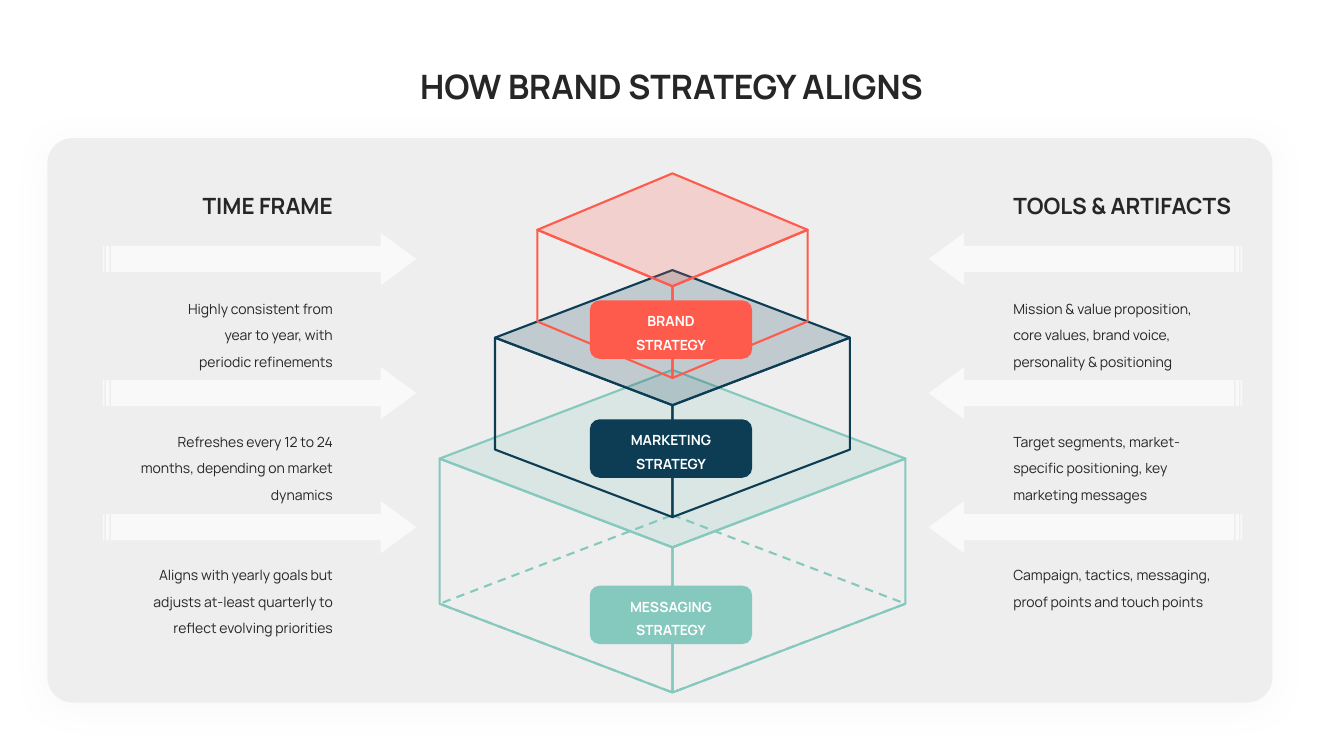
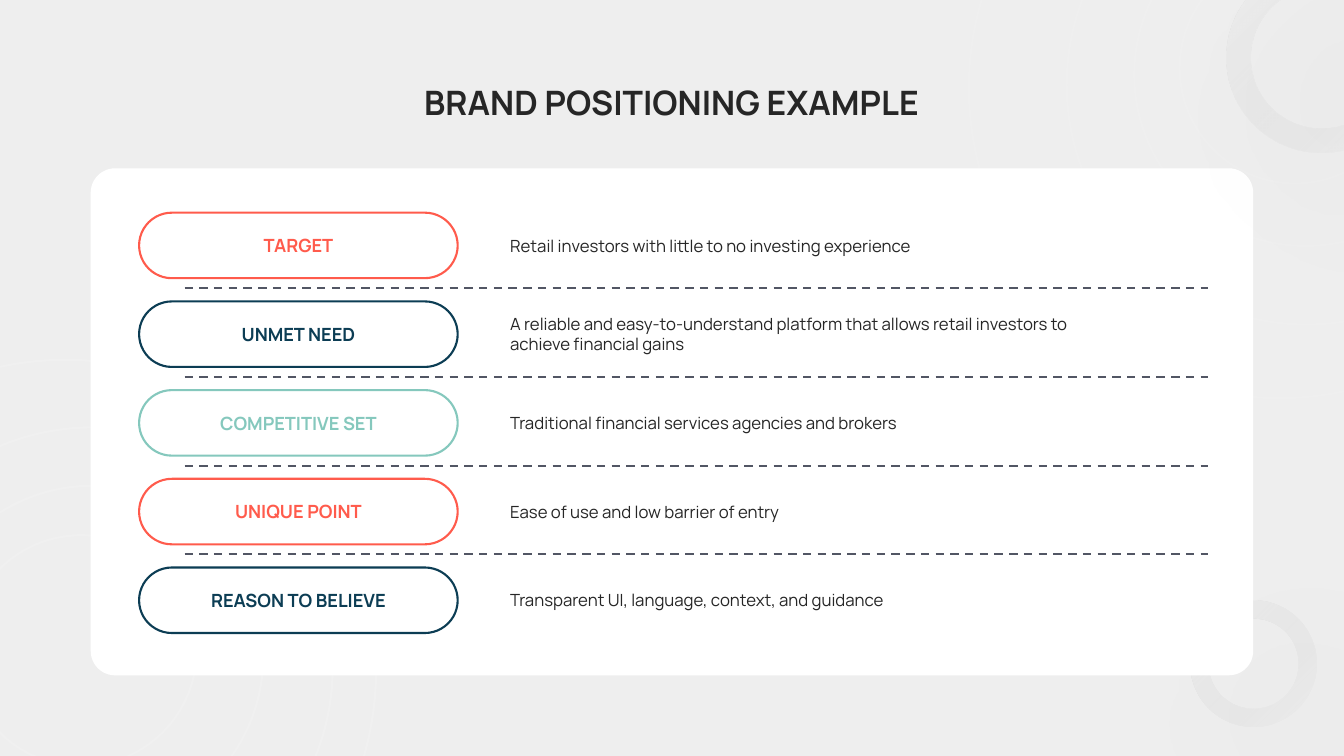
from lxml.etree import SubElement
from pptx import Presentation
from pptx.dml.color import RGBColor
from pptx.enum.dml import MSO_LINE
from pptx.enum.shapes import MSO_CONNECTOR, MSO_SHAPE
from pptx.enum.text import MSO_ANCHOR, PP_ALIGN
from pptx.oxml.ns import qn
from pptx.util import Inches, Pt

COLORS = {
    "ink": "262626", "white": "FFFFFF", "mist": "EEEEEE", "gray": "7F7F7F",
    "coral": "FF5B4C", "navy": "0C3D54", "mint": "85C8BD", "slate": "525664",
    "silver": "BFBFBF", "black": "000000", "blue": "3553D3",
}
FONT = "Manrope"
FRAME = {"margin_left": 0, "margin_right": 0, "margin_top": 0,
         "margin_bottom": 0, "word_wrap": True}
TITLE = {"size": 24, "bold": True, "align": PP_ALIGN.CENTER}
HEADING = {"size": 16, "bold": True}
BODY = {"size": 10, "spacing": 1.56, "anchor": MSO_ANCHOR.TOP}
BADGE = {"size": 10, "bold": True, "color": "white", "spacing": 1.4,
         "align": PP_ALIGN.CENTER}
PILL = {"size": 13, "bold": True, "align": PP_ALIGN.CENTER}
# colour, opacity %, blur pt, distance pt, direction degrees
PANEL_SHADOW = ("silver", 10, 24, 4, 90)
RING_SHADOW = ("blue", 5, 52, 4, 90)
DONUT_SHADOW = ("black", 40, 100, 65, 45)


# Shared helpers
def rgb(name):
    return RGBColor.from_string(COLORS[name])


def inches(*lengths):
    return [Inches(length) for length in lengths]


def set_alpha(color_node, percent):
    SubElement(color_node, qn("a:alpha"), val=str(percent * 1000))


def paint(shape, fill=None, line=None, alpha=100, line_alpha=100, dash=None):
    shape.shadow.inherit = False
    if fill:
        shape.fill.solid()
        shape.fill.fore_color.rgb = rgb(fill)
        if alpha < 100:
            set_alpha(shape.fill._xPr.find(".//" + qn("a:srgbClr")), alpha)
    else:
        shape.fill.background()
    if line:
        shape.line.color.rgb = rgb(line)
        shape.line.width = Pt(1.5)
        if dash:
            shape.line.dash_style = dash
        if line_alpha < 100:
            set_alpha(shape.line._ln.find(".//" + qn("a:srgbClr")), line_alpha)
    else:
        shape.line.fill.background()


def cast_shadow(shape, color, opacity, blur, distance, direction):
    effects = shape._element.spPr.find(qn("a:effectLst"))
    shadow = SubElement(effects, qn("a:outerShdw"), blurRad=str(Pt(blur)),
                        dist=str(Pt(distance)), dir=str(direction * 60000),
                        algn="ctr", rotWithShape="0")
    set_alpha(SubElement(shadow, qn("a:srgbClr"), val=COLORS[color]), opacity)


def add_preset(page, kind, box, adjustments=(), **look):
    shape = page.shapes.add_shape(kind, *inches(*box))
    for index, value in enumerate(adjustments):
        shape.adjustments[index] = value
    paint(shape, **look)
    return shape


def write(shape, text, size, bold=False, color="ink", align=PP_ALIGN.LEFT,
          spacing=1.0, anchor=MSO_ANCHOR.MIDDLE):
    frame = shape.text_frame
    for name, value in FRAME.items():
        setattr(frame, name, value)
    frame.vertical_anchor = anchor
    for index, line in enumerate(text.split("\n")):
        para = frame.paragraphs[0] if index == 0 else frame.add_paragraph()
        para.alignment, para.line_spacing = align, spacing
        span = para.add_run()
        span.text = line
        values = {"name": FONT, "size": Pt(size), "bold": bold}
        for name, value in values.items():
            setattr(span.font, name, value)
        span.font.color.rgb = rgb(color)


def add_text(page, box, text, **style):
    write(page.shapes.add_textbox(*inches(*box)), text, **style)


def add_page(deck, title, title_top, background):
    page = deck.slides.add_slide(deck.slide_layouts[5])
    page.background.fill.solid()
    page.background.fill.fore_color.rgb = rgb(background)
    holder = page.shapes.title
    holder.left, holder.top, holder.width, holder.height = inches(
        2.82, title_top, 7.68, 0.4)
    write(holder, title, **TITLE)
    return page


# Slide 1: stacked cubes between two columns
def add_column(page, arrow_left, text_left, top, heading, notes, flip=False):
    align = PP_ALIGN.LEFT if flip else PP_ALIGN.RIGHT
    heading_width = 2.51 if flip else 2
    add_text(page, (text_left, top, heading_width, 0.27), heading,
             align=align, **HEADING)
    for index, note in enumerate(notes):
        arrow = add_preset(page, MSO_SHAPE.STRIPED_RIGHT_ARROW,
                           (arrow_left, top + 0.41 + 1.33 * index, 3.11, 0.52),
                           (0.5, 0.68), fill="white", alpha=67)
        if flip:
            arrow._element.spPr.find(qn("a:xfrm")).set("flipH", "1")
        add_text(page, (text_left, top + 0.99 + 1.32 * index, 2, 0.66), note,
                 align=align, **BODY)


def add_outline(page, points, **look):
    corners = [inches(*point) for point in points]
    builder = page.shapes.build_freeform(*corners[0], scale=1.0)
    builder.add_line_segments(corners[1:], close=True)
    paint(builder.convert_to_shape(), **look)


def add_cube(page, center, top, half_width, half_height, depth, color,
             dashed_base=False):
    left, right = center - half_width, center + half_width
    middle, front = top + half_height, top + 2 * half_height
    lid = [(center, top), (right, middle), (center, front), (left, middle)]
    if dashed_base:
        add_outline(page, [(x, y + depth) for x, y in lid], line=color,
                    dash=MSO_LINE.DASH)
    for side in (left, right):
        add_outline(page, [(center, front + depth), (side, middle + depth),
                           (side, middle), (center, front)], line=color)
    add_outline(page, lid, fill=color, alpha=20, line=color)


def build_alignment(deck):
    page = add_page(deck, "HOW BRAND STRATEGY ALIGNS", 0.65, "white")
    panel = add_preset(page, MSO_SHAPE.ROUNDED_RECTANGLE,
                       (0.47, 1.37, 12.15, 5.6), (0.045,), fill="mist")
    cast_shadow(panel, *PANEL_SHADOW)
    add_column(page, 1.02, 1.3, 1.9, "TIME FRAME", [
        "Highly consistent from\nyear to year, with\nperiodic refinements",
        "Refreshes every 12 to 24 months, depending on market dynamics",
        "Aligns with yearly goals but adjusts at-least quarterly to reflect "
        "evolving priorities"])
    add_column(page, 9.21, 10.05, 1.9, "TOOLS & ARTIFACTS", [
        "Mission & value proposition, core values, brand voice, "
        "personality & positioning",
        "Target segments, market-specific positioning, key marketing messages",
        "Campaign, tactics, messaging, proof points and touch points"],
        flip=True)
    center = 6.67
    add_cube(page, center, 3.67, 2.31, 0.88, 1.44, "mint", dashed_base=True)
    add_cube(page, center, 2.68, 1.76, 0.67, 1.11, "navy")
    add_cube(page, center, 1.72, 1.34, 0.56, 0.91, "coral")
    for top, name, color in [(5.81, "MESSAGING", "mint"),
                             (4.16, "MARKETING", "navy"),
                             (2.98, "BRAND", "coral")]:
        badge = add_preset(page, MSO_SHAPE.ROUNDED_RECTANGLE,
                           (5.85, top, 1.61, 0.58), (0.167,), fill=color)
        write(badge, name + "\nSTRATEGY", **BADGE)


# Slide 2: positioning rows on a card
def add_rings(page, left, top, opacity):
    for x, y, size in [(0, 0, 6.16), (0.97, 0.67, 4.76),
                       (1.64, 1.25, 3.4), (2.09, 1.74, 2.29)]:
        ring = add_preset(page, MSO_SHAPE.OVAL, (left + x, top + y, size, size),
                          line="white", line_alpha=opacity)
        cast_shadow(ring, *RING_SHADOW)


def add_donut(page, left, top, size, thickness):
    donut = add_preset(page, MSO_SHAPE.DONUT, (left, top, size, size),
                       (thickness,))
    donut.fill.gradient()
    donut.fill.gradient_angle = 315
    stops = zip(donut.fill.gradient_stops,
                [(0.02, "mist", 20), (1, "gray", 0)])
    for stop, (position, color, opacity) in stops:
        stop.position = position
        stop.color.rgb = rgb(color)
        set_alpha(stop._gs.find(qn("a:srgbClr")), opacity)
    cast_shadow(donut, *DONUT_SHADOW)


def add_divider(page, left, right, y):
    divider = page.shapes.add_connector(MSO_CONNECTOR.STRAIGHT,
                                        *inches(left, y, right, y))
    divider.line.color.rgb = rgb("slate")
    divider.line.width = Pt(1.5)
    divider.line.dash_style = MSO_LINE.DASH
    SubElement(divider._element.spPr, qn("a:effectLst"))


def add_rows(page, left, top, rows):
    pitch, height = 0.88, 0.65
    for index, (label, color, text) in enumerate(rows):
        y = top + pitch * index
        pill = add_preset(page, MSO_SHAPE.ROUNDED_RECTANGLE,
                          (left, y, 3.16, height), (0.5,),
                          fill="white", line=color)
        write(pill, label, color=color, **PILL)
        add_text(page, (left + 3.68, y, 5.77, height), text, size=12)
        if index:
            add_divider(page, left + 0.45, left + 10.6, y - 0.13)


def build_positioning(deck):
    page = add_page(deck, "BRAND POSITIONING EXAMPLE", 0.81, "mist")
    add_donut(page, 11.81, 5.96, 1.25, 0.145)
    add_rings(page, 9.61, -2.21, 8)
    add_rings(page, -2.43, 3.57, 13)
    add_preset(page, MSO_SHAPE.ROUNDED_RECTANGLE, (0.9, 1.67, 11.53, 5.03),
               (0.048,), fill="white")
    add_rows(page, 1.38, 2.11, [
        ("TARGET", "coral",
         "Retail investors with little to no investing experience"),
        ("UNMET NEED", "navy",
         "A reliable and easy-to-understand platform that allows retail "
         "investors to achieve financial gains"),
        ("COMPETITIVE SET", "mint",
         "Traditional financial services agencies and brokers"),
        ("UNIQUE POINT", "coral", "Ease of use and low barrier of entry"),
        ("REASON TO BELIEVE", "navy",
         "Transparent UI, language, context, and guidance")])
    add_donut(page, 12.17, -0.37, 1.88, 0.129)


def main():
    deck = Presentation()
    deck.slide_width, deck.slide_height = inches(13.33, 7.5)
    build_alignment(deck)
    build_positioning(deck)
    deck.save("out.pptx")


if __name__ == "__main__":
    main()
